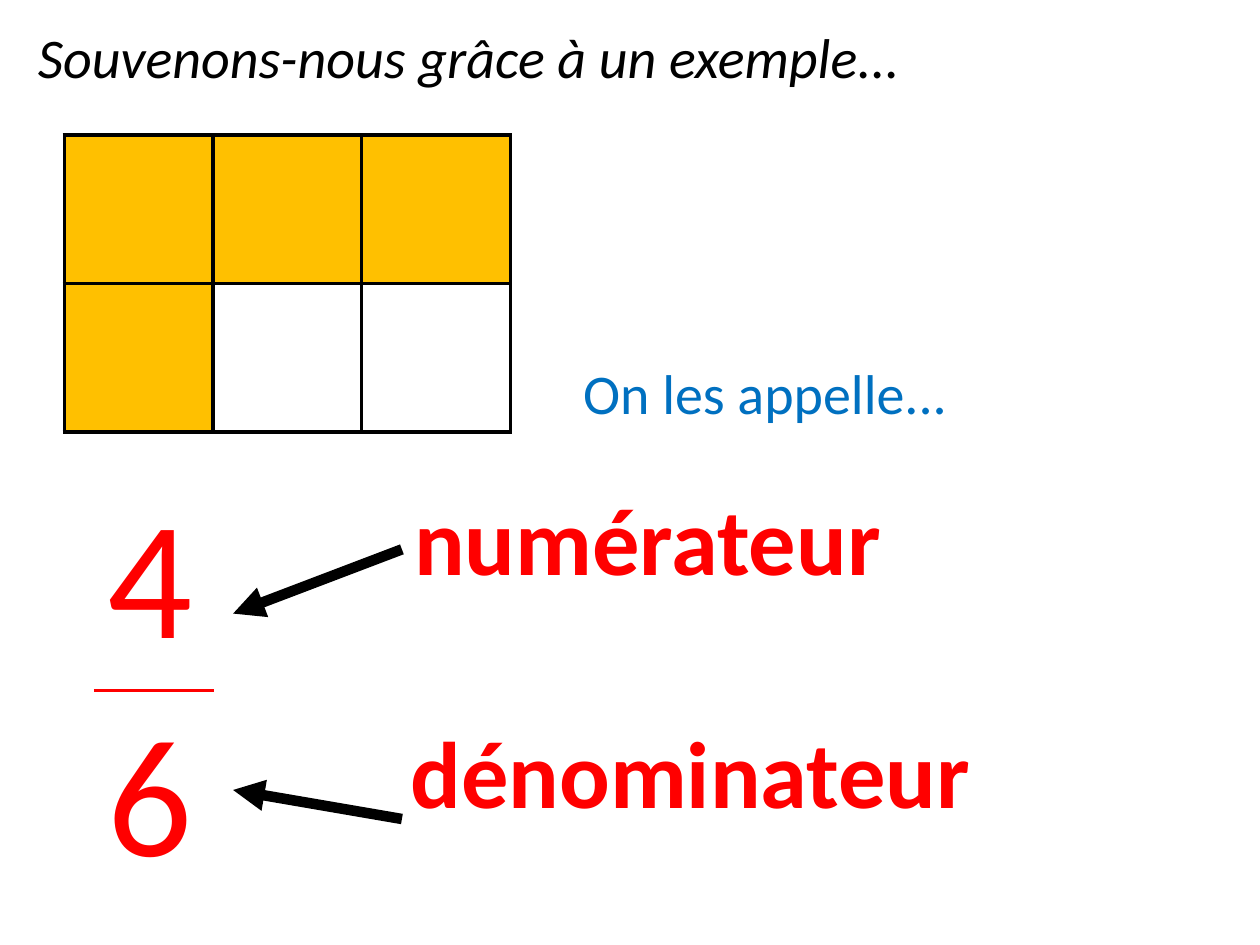
from pptx import Presentation
from pptx.dml.color import RGBColor
from pptx.enum.shapes import MSO_CONNECTOR
from pptx.enum.text import MSO_ANCHOR, PP_ALIGN
from pptx.oxml import parse_xml
from pptx.oxml.ns import nsdecls
from pptx.util import Inches, Pt

HUES = {"black": "000000", "red": "FF0000", "blue": "0070C0", "gold": "FFC000"}


def write(frame, text, size, hue, bold=False, italic=False):
    para = frame.paragraphs[0]
    para.alignment = PP_ALIGN.LEFT
    run = para.add_run()
    run.text = text
    font = run.font
    font.name = "Calibri"
    font.size = Pt(size)
    font.bold = bold
    font.italic = italic
    font.color.rgb = RGBColor.from_string(HUES[hue])


def edge(cell, sides, hue):
    props = cell._tc.get_or_add_tcPr()
    for spot, side in enumerate(sides):
        props.insert(spot, parse_xml(
            f'<a:ln{side} {nsdecls("a")} w="{Pt(2.25)}"><a:solidFill>'
            f'<a:srgbClr val="{HUES[hue]}"/></a:solidFill></a:ln{side}>'))


deck = Presentation()
deck.slide_width = Inches(10)
deck.slide_height = Inches(7.5)
slide = deck.slides.add_slide(deck.slide_layouts[5])
shapes = slide.shapes

title = shapes.title
title.left, title.top = Inches(0.2), Inches(0.13)
title.width, title.height = Inches(9.69), Inches(0.64)
title.text_frame.vertical_anchor = MSO_ANCHOR.TOP
write(title.text_frame, "Souvenons-nous grâce à un exemple...", 32, "black", italic=True)

ratio = shapes.add_table(2, 1, Inches(0.75), Inches(3.75), Inches(0.94), Inches(3.4)).table
grid = shapes.add_table(2, 3, Inches(0.51), Inches(1.07), Inches(3.54), Inches(2.36)).table
for table in (ratio, grid):
    table.first_row = False
    table.horz_banding = False

for row, (digit, side) in enumerate([("4", "B"), ("6", "T")]):
    cell = ratio.cell(row, 0)
    cell.fill.background()
    write(cell.text_frame, digit, 96, "red")
    edge(cell, side, "red")

for part, cell in enumerate(grid.iter_cells()):
    if part < 4:
        cell.fill.solid()
        cell.fill.fore_color.rgb = RGBColor.from_string(HUES["gold"])
    else:
        cell.fill.background()
    edge(cell, "LRTB", "black")

for start, end in [(6.5, 6.27), (4.36, 4.87)]:
    arrow = shapes.add_connector(
        MSO_CONNECTOR.STRAIGHT, Inches(3.19), Inches(start), Inches(1.85), Inches(end))
    arrow.line.width = Pt(6)
    arrow.line.color.rgb = RGBColor.from_string(HUES["black"])
    arrow.line._get_or_add_ln().append(
        parse_xml(f'<a:tailEnd {nsdecls("a")} type="triangle"/>'))
    arrow._element.spPr.append(parse_xml(f'<a:effectLst {nsdecls("a")}/>'))

labels = [
    ("dénominateur", 3.16, 5.62, 6.84, 1.01, 54, "red", True),
    ("numérateur", 3.19, 3.77, 6.84, 1.01, 54, "red", True),
    ("On les appelle...", 4.53, 2.8, 3.46, 0.64, 32, "blue", False),
]
for text, left, top, width, height, size, hue, bold in labels:
    box = shapes.add_textbox(Inches(left), Inches(top), Inches(width), Inches(height))
    box.text_frame.word_wrap = True
    write(box.text_frame, text, size, hue, bold)

deck.save("out.pptx")
